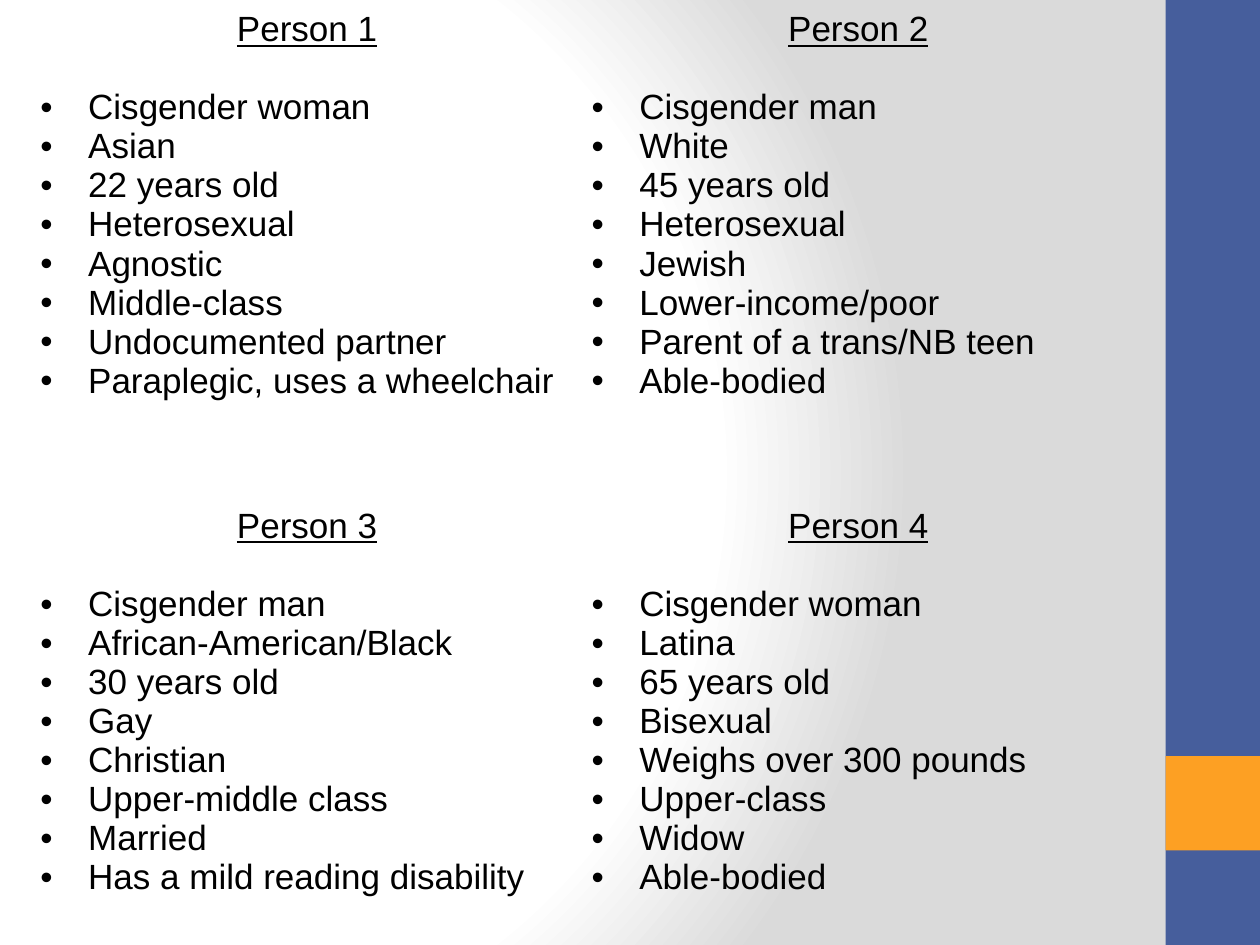
from lxml import etree
from pptx import Presentation, util as u
from pptx.dml.color import RGBColor
from pptx.enum import shapes, text
from pptx.oxml import parse_xml
from pptx.oxml.ns import nsdecls, qn

# Content: rows of (heading, traits)
PEOPLE = [
    [("Person 1", ["Cisgender woman", "Asian", "22 years old", "Heterosexual", "Agnostic",
                   "Middle-class", "Undocumented partner", "Paraplegic, uses a wheelchair"]),
     ("Person 2", ["Cisgender man", "White", "45 years old", "Heterosexual", "Jewish",
                   "Lower-income/poor", "Parent of a trans/NB teen", "Able-bodied"])],
    [("Person 3", ["Cisgender man", "African-American/Black", "30 years old", "Gay", "Christian",
                   "Upper-middle class", "Married", "Has a mild reading disability"]),
     ("Person 4", ["Cisgender woman", "Latina", "65 years old", "Bisexual",
                   "Weighs over 300 pounds", "Upper-class", "Widow", "Able-bodied"])],
]
COLORS = {"text": "000000", "band": "465E9C", "accent": "FDA023",
          "light": "FFFFFF", "shade": "DADADA"}
FONT, SIZE = "Arial", 20
LINE_HEIGHT = 22.3  # points
WIDTH, HEIGHT = 10, 7.5
BAND = 0.75
TABLE_LEFT, TABLE_TOP, TABLE_WIDTH = 0.25, 0.08, 8.75
ROW_HEIGHTS = [3.94, 3.39]
NO_GRID_STYLE = "{2D5ABB26-0587-4C30-8999-92F81FD0307C}"


def set_background(slide):
    stops = "".join(
        f'<a:gs pos="{share * 1000}"><a:srgbClr val="{COLORS[name]}"/></a:gs>'
        for share, name in [(0, "light"), (75, "light"), (100, "shade")])
    slide.element.cSld.insert(0, parse_xml(
        f'<p:bg {nsdecls("p", "a")}><p:bgPr><a:gradFill rotWithShape="1">'
        f'<a:gsLst>{stops}</a:gsLst><a:path path="circle">'
        '<a:fillToRect l="20000" t="50000" r="100000" b="50000"/></a:path>'
        '</a:gradFill><a:effectLst/></p:bgPr></p:bg>'))


def add_block(slide, top, height, color):
    shape = slide.shapes.add_shape(
        shapes.MSO_SHAPE.RECTANGLE, u.Inches(WIDTH - BAND), u.Inches(top),
        u.Inches(BAND), u.Inches(height))
    shape.shadow.inherit = False
    shape.fill.solid()
    shape.fill.fore_color.rgb = RGBColor.from_string(COLORS[color])
    shape.line.fill.background()


def write(paragraph, words, heading=False):
    run = paragraph.add_run()
    run.text = words
    run.font.name, run.font.size = FONT, u.Pt(SIZE)
    run.font.color.rgb = RGBColor.from_string(COLORS["text"])
    run.font.underline = heading
    if heading:
        paragraph.alignment = text.PP_ALIGN.CENTER
        paragraph.space_after = u.Pt(LINE_HEIGHT)
    else:
        properties = paragraph._p.get_or_add_pPr()
        properties.set("marL", str(u.Inches(0.38)))
        properties.set("indent", str(-u.Inches(0.38)))
        etree.SubElement(properties, qn("a:buFont")).set("typeface", FONT)
        etree.SubElement(properties, qn("a:buChar")).set("char", "•")


def fill_cell(cell, heading, traits):
    cell.fill.background()
    cell.margin_left = cell.margin_right = u.Inches(0.07)
    cell.margin_top = cell.margin_bottom = 0
    frame = cell.text_frame
    write(frame.paragraphs[0], heading, heading=True)
    for trait in traits:
        write(frame.add_paragraph(), trait)


def add_people_table(slide):
    table = slide.shapes.add_table(
        len(PEOPLE), len(PEOPLE[0]), u.Inches(TABLE_LEFT), u.Inches(TABLE_TOP),
        u.Inches(TABLE_WIDTH), u.Inches(sum(ROW_HEIGHTS))).table
    table.first_row = table.horz_banding = False
    table._tbl.tblPr.find(qn("a:tableStyleId")).text = NO_GRID_STYLE
    for row, height, people in zip(table.rows, ROW_HEIGHTS, PEOPLE):
        row.height = u.Inches(height)
        for cell, (heading, traits) in zip(row.cells, people):
            fill_cell(cell, heading, traits)


def main():
    presentation = Presentation()
    presentation.slide_width, presentation.slide_height = u.Inches(WIDTH), u.Inches(HEIGHT)
    slide = presentation.slides.add_slide(presentation.slide_layouts[6])
    set_background(slide)
    # Side band with its accent square
    add_block(slide, 0, HEIGHT, "band")
    add_block(slide, HEIGHT - 2 * BAND, BAND, "accent")
    add_people_table(slide)
    presentation.save("out.pptx")


if __name__ == "__main__":
    main()
